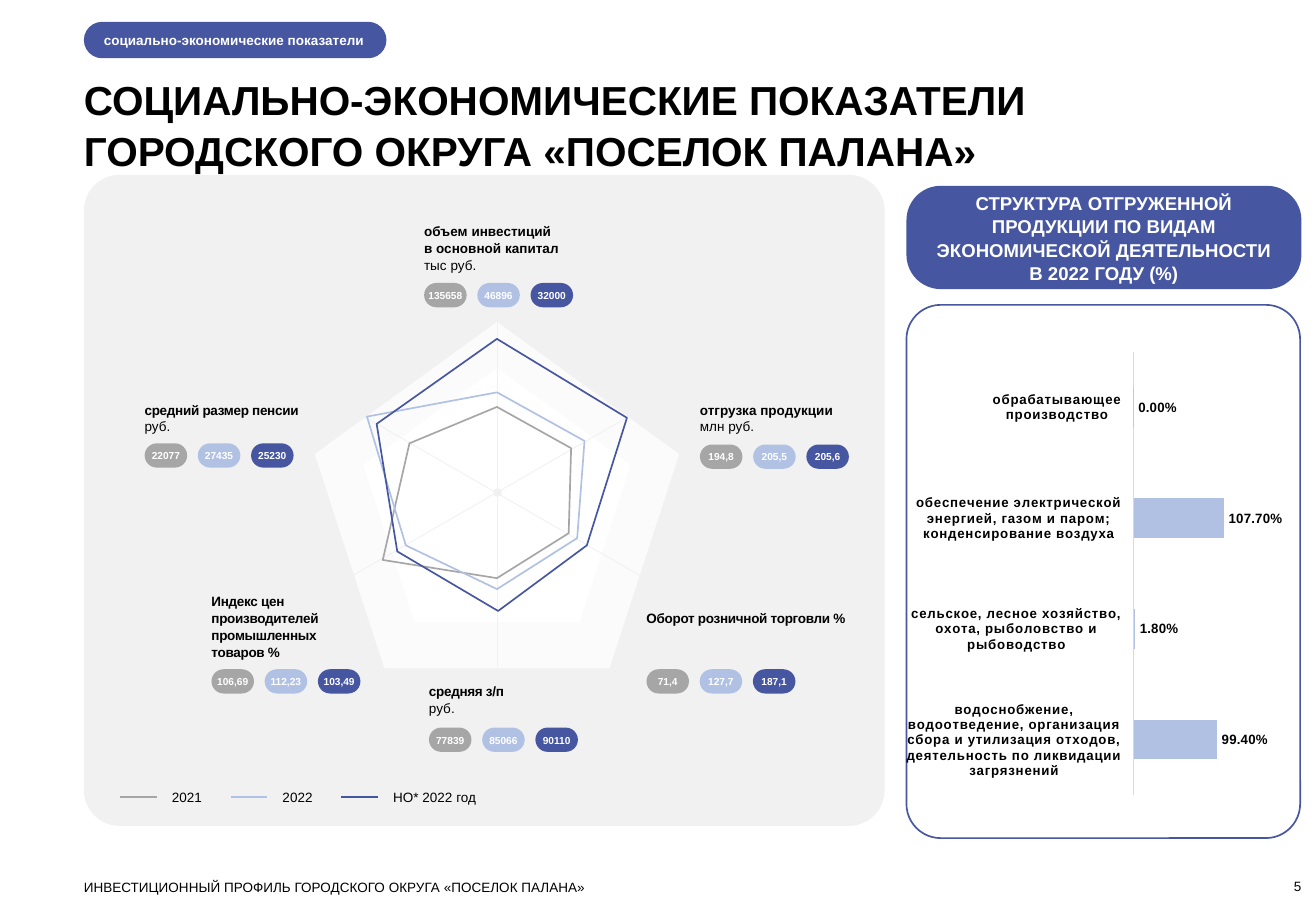
"""Builds the socio-economic indicators slide on a grid of tenth-of-an-inch cells."""
from dataclasses import dataclass
from typing import Optional

from lxml.etree import SubElement
from pptx import Presentation
from pptx.chart.data import CategoryChartData
from pptx.dml.color import RGBColor
from pptx.enum.chart import XL_CHART_TYPE as Chart, XL_LABEL_POSITION as LabelPos
from pptx.enum.chart import XL_TICK_LABEL_POSITION as TickLabel, XL_TICK_MARK as Tick
from pptx.enum.shapes import MSO_CONNECTOR as Conn, MSO_SHAPE as Shp
from pptx.enum.text import MSO_ANCHOR as Anchor, PP_ALIGN as Align
from pptx.oxml import parse_xml
from pptx.oxml.ns import nsdecls, qn
from pptx.util import Emu, Inches, Pt

CELL = Inches(0.1)
FONT = "Arial"
COLORS = {"blue": "4756A0", "light": "B1C1E4", "gray": "A6A6A6", "panel": "F1F1F1",
          "outer": "FBFBFB", "white": "FFFFFF", "black": "000000", "axis": "D9D9D9"}
SERIES = ("gray", "light", "blue")


@dataclass(frozen=True)
class Box:
    col: float
    row: float
    cols: float
    rows: float


@dataclass(frozen=True)
class Run:
    text: str
    size: float = 8
    color: str = "black"
    bold: bool = False
    spacing: float = 0


@dataclass(frozen=True)
class Indicator:
    box: Box
    pill_row: float
    paras: list[list[Run]]
    values: tuple[str, str, str]


@dataclass(frozen=True)
class LegendItem:
    col: float
    label: str
    color: str


def bold(text: str, spacing: float = 0) -> Run:
    return Run(text, bold=True, spacing=spacing)


INDICATORS = [
    Indicator(Box(34.9, 18.3, 12.3, 4), 23.3,
              [[bold("объем инвестиций")], [bold("в основной капитал "), Run("тыс руб.")]],
              ("135658", "46896", "32000")),
    Indicator(Box(57.6, 33, 12.3, 2.7), 36.6,
              [[bold("отгрузка продукции")], [Run("млн руб.")]], ("194,8", "205,5", "205,6")),
    Indicator(Box(53.2, 50.2, 17.1, 1.3), 55.1,
              [[bold("Оборот розничной торговли %", -0.2)]], ("71,4", "127,7", "187,1")),
    Indicator(Box(17.4, 48.8, 10.8, 5.4), 55.1,
              [[bold("Индекс цен производителей промышленных товаров %", -0.2)]],
              ("106,69", "112,23", "103,49")),
    Indicator(Box(11.9, 33, 17.1, 2.7), 36.5,
              [[bold("средний размер пенсии", -0.2)], [Run("руб.")]],
              ("22077", "27435", "25230")),
    Indicator(Box(35.3, 56.2, 10.8, 2.7), 59.9,
              [[bold("средняя з/п", -0.2)], [Run("руб.")]], ("77839", "85066", "90110")),
]
RADAR = {
    "gray": [(33.7, 36.5), (40.9, 33.5), (47, 36.9), (46.8, 43.9), (40.9, 47.6), (31.5, 46.1)],
    "light": [(30.2, 34.3), (40.9, 32.3), (48.1, 36.3), (47.5, 44.3), (40.9, 48.5), (33.4, 44.9)],
    "blue": [(31, 34.9), (40.9, 27.9), (51.6, 34.4), (48.3, 44.9), (41, 50.3), (32.7, 45.4)],
}
SPOKES = [(40.9, 26.5, 40.9, 55), (51.9, 34.2, 29, 47.4), (29.8, 34.2, 52.7, 47.4)]
LEGEND = [LegendItem(9.9, "2021", "gray"), LegendItem(19, "2022", "light"),
          LegendItem(28.1, "НО* 2022 год", "blue")]
OUTPUT = [
    ("водоснобжение, водоотведение, организация сбора и утилизация отходов, "
     "деятельность по ликвидации загрязнений", 0.994),
    ("сельское, лесное хозяйство, охота, рыболовство и рыбоводство", 0.018),
    ("обеспечение электрической энергией, газом и паром; конденсирование воздуха", 1.077),
    ("обрабатывающее производство", 0),
]
HEADING = ["СТРУКТУРА ОТГРУЖЕННОЙ", "ПРОДУКЦИИ ПО ВИДАМ",
           "ЭКОНОМИЧЕСКОЙ ДЕЯТЕЛЬНОСТИ", "В 2022 ГОДУ (%)"]


def grid(cells: float) -> Emu:
    return Emu(round(cells * CELL))


def place(b: Box) -> tuple[Emu, Emu, Emu, Emu]:
    return grid(b.col), grid(b.row), grid(b.cols), grid(b.rows)


def rgb(name: str) -> RGBColor:
    return RGBColor.from_string(COLORS[name])


def write(sp, paras: list[list[Run]], align=Align.LEFT, anchor=Anchor.TOP, left: float = 0) -> None:
    tf = sp.text_frame
    tf.word_wrap, tf.vertical_anchor = True, anchor
    tf.margin_left = grid(left)
    tf.margin_right = tf.margin_top = tf.margin_bottom = 0
    for i, runs in enumerate(paras):
        p = tf.add_paragraph() if i else tf.paragraphs[0]
        p.alignment, p.line_spacing = align, 1.05
        for run in runs:
            r = p.add_run()
            r.text = run.text
            r.font.name, r.font.size, r.font.bold = FONT, Pt(run.size), run.bold
            r.font.color.rgb = rgb(run.color)
            if run.spacing:
                r.font._element.set("spc", str(round(run.spacing * 100)))


def add_text(slide, box: Box, paras: list[list[Run]], **layout) -> None:
    write(slide.shapes.add_textbox(*place(box)), paras, **layout)


def add_shape(slide, kind, box: Box, fill: Optional[str] = None, line: Optional[str] = None,
              adj: Optional[float] = None):
    sp = slide.shapes.add_shape(kind, *place(box))
    style(sp, fill, line)
    if adj is not None:
        sp.adjustments[0] = adj
    return sp


def style(sp, fill: Optional[str], line: Optional[str]) -> None:
    sp.shadow.inherit = False
    if fill:
        sp.fill.solid()
        sp.fill.fore_color.rgb = rgb(fill)
    else:
        sp.fill.background()
    if line:
        sp.line.color.rgb, sp.line.width = rgb(line), Pt(1)
    else:
        sp.line.fill.background()


def add_line(slide, x1: float, y1: float, x2: float, y2: float, color: str, width: float) -> None:
    ln = slide.shapes.add_connector(Conn.STRAIGHT, grid(x1), grid(y1), grid(x2), grid(y2))
    ln.line.color.rgb, ln.line.width = rgb(color), Pt(width)
    SubElement(ln._element.spPr, qn("a:effectLst"))


def add_indicator(slide, ind: Indicator) -> None:
    add_text(slide, ind.box, ind.paras)
    for i, (value, color) in enumerate(zip(ind.values, SERIES)):
        pill = Box(ind.box.col + 4.38 * i, ind.pill_row, 3.5, 2)
        sp = add_shape(slide, Shp.ROUNDED_RECTANGLE, pill, color, adj=0.5)
        write(sp, [[Run(value, 6, "white", True)]], Align.CENTER, Anchor.MIDDLE)


def add_radar(slide) -> None:
    add_shape(slide, Shp.REGULAR_PENTAGON, Box(25.9, 26.5, 30, 28.5), "outer")
    add_shape(slide, Shp.REGULAR_PENTAGON, Box(29.9, 30.3, 22, 20.9), "white")
    for spoke in SPOKES:
        add_line(slide, *spoke, "panel", 0.5)
    add_shape(slide, Shp.OVAL, Box(40.6, 40.2, 0.7, 0.7), "panel")
    for color, points in RADAR.items():
        start, *rest = [(grid(x), grid(y)) for x, y in points]
        fb = slide.shapes.build_freeform(*start)
        fb.add_line_segments(rest, close=True)
        style(fb.convert_to_shape(), None, color)


def add_output_chart(slide) -> None:
    data = CategoryChartData(number_format="0.00%")
    data.categories = [name for name, _ in OUTPUT]
    data.add_series("Series 1", [value for _, value in OUTPUT])
    chart = slide.shapes.add_chart(Chart.BAR_CLUSTERED, *place(Box(74.6, 25, 32.4, 44)), data).chart
    chart.has_legend = chart.has_title = False
    chart.font.name, chart.font.size, chart.font.bold = FONT, Pt(8), True
    chart.font.color.rgb = rgb("black")
    cat, val, plot = chart.category_axis, chart.value_axis, chart.plots[0]
    cat.major_tick_mark = cat.minor_tick_mark = Tick.NONE
    cat.tick_label_position = TickLabel.LOW
    cat.format.line.color.rgb, cat.format.line.width = rgb("axis"), Pt(0.75)
    cat.tick_labels.font.size, cat.tick_labels.font.bold = Pt(8), True
    cat.tick_labels.font._element.set("spc", "30")
    val.visible = val.has_major_gridlines = False
    val.minimum_scale, val.maximum_scale = 0, 1.2
    plot.gap_width, plot.vary_by_categories, plot.has_data_labels = 182, False, True
    labels = plot.data_labels
    labels.show_value, labels.position = True, LabelPos.OUTSIDE_END
    labels.number_format, labels.number_format_is_linked = "0.00%", False
    ser = plot.series[0]
    for target, color in ((ser, "light"), (ser.points[3], "blue")):
        target.format.fill.solid()
        target.format.fill.fore_color.rgb = rgb(color)
    area = chart._chartSpace.chart.plotArea
    for old in area.findall(qn("c:layout")):
        area.remove(old)
    shares = "".join(f'<c:{k} val="{v}"/>' for k, v in
                     {"layoutTarget": "inner", "xMode": "edge", "yMode": "edge",
                      "x": 0.57, "y": 0.09, "w": 0.26, "h": 0.83}.items())
    area.insert(0, parse_xml(f'<c:layout {nsdecls("c")}><c:manualLayout>{shares}'
                             '</c:manualLayout></c:layout>'))


def main() -> None:
    prs = Presentation()
    prs.slide_width, prs.slide_height = grid(108.3), grid(75)
    slide = prs.slides.add_slide(prs.slide_layouts[6])
    round_rect = Shp.ROUNDED_RECTANGLE
    tag = add_shape(slide, round_rect, Box(6.9, 1.8, 24.9, 3), "blue", adj=0.5)
    write(tag, [[Run("социально-экономические показатели", 8, "white", True)]],
          anchor=Anchor.MIDDLE, left=1.2)
    add_text(slide, Box(6.9, 6, 96.5, 8.1),
             [[Run("СОЦИАЛЬНО-ЭКОНОМИЧЕСКИЕ ПОКАЗАТЕЛИ", 24, bold=True)],
              [Run("ГОРОДСКОГО ОКРУГА «ПОСЕЛОК ПАЛАНА»", 24, bold=True)]])
    add_shape(slide, round_rect, Box(6.9, 14.4, 65.9, 53.6), "panel", adj=0.055)
    heading = add_shape(slide, round_rect, Box(74.6, 15.3, 32.5, 8.5), "blue", adj=0.331)
    write(heading, [[Run(line, 11, "white", True)] for line in HEADING],
          Align.CENTER, Anchor.MIDDLE)
    add_shape(slide, round_rect, Box(74.6, 25.1, 32.4, 43.9), line="blue", adj=0.087)
    add_output_chart(slide)
    add_radar(slide)
    for ind in INDICATORS:
        add_indicator(slide, ind)
    for item in LEGEND:
        add_line(slide, item.col, 65.6, item.col + 3, 65.6, item.color, 1)
        add_text(slide, Box(item.col + 4.25, 64.9, 8.6, 1.3), [[Run(item.label)]])
    add_text(slide, Box(6.9, 72.3, 80, 1.3),
             [[Run("ИНВЕСТИЦИОННЫЙ ПРОФИЛЬ ГОРОДСКОГО ОКРУГА «ПОСЕЛОК ПАЛАНА»")]])
    add_text(slide, Box(99.1, 72.3, 8, 1.3), [[Run("5")]], align=Align.RIGHT, anchor=Anchor.BOTTOM)
    prs.save("out.pptx")


if __name__ == "__main__":
    main()
